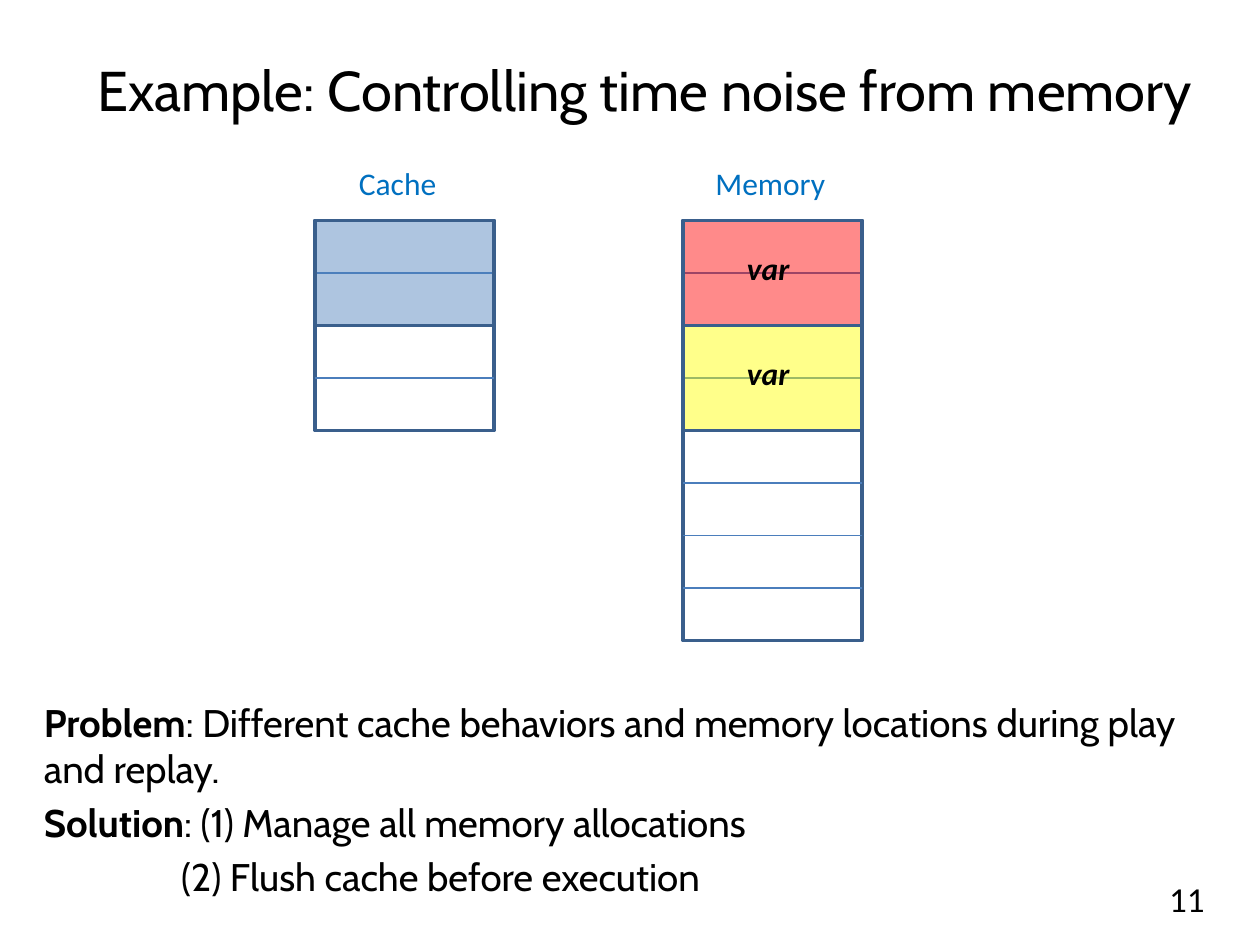
from lxml import etree
from pptx import Presentation
from pptx.dml.color import RGBColor
from pptx.enum import shapes, text
from pptx.oxml import ns
from pptx.util import Inches, Pt

BLACK = RGBColor(0x00, 0x00, 0x00)
LABEL = RGBColor(0x00, 0x70, 0xC0)
BORDER = RGBColor(0x3A, 0x5F, 0x8C)
RULE = RGBColor(0x4B, 0x7E, 0xBC)
RED = RGBColor(0xFF, 0x00, 0x00)
YELLOW = RGBColor(0xFF, 0xFF, 0x00)
BLUE = RGBColor(0x4F, 0x81, 0xBD)

TOP = 1.75
ROW = 5 / 12
WIDTH = 1.42

prs = Presentation()
prs.slide_width, prs.slide_height = Inches(10), Inches(7.5)
s = prs.slides.add_slide(prs.slide_layouts[6])


def add_text(x, y, w, h, paragraphs, size, font="Calibri", color=BLACK):
    """Add a text box; each paragraph is a list of (text, bold) runs."""
    tf = s.shapes.add_textbox(Inches(x), Inches(y), Inches(w), Inches(h)).text_frame
    tf.word_wrap = True
    for i, runs in enumerate(paragraphs):
        p = tf.add_paragraph() if i else tf.paragraphs[0]
        p.font.size, p.font.name, p.font.color.rgb = Pt(size), font, color
        for words, bold in runs:
            r = p.add_run()
            r.text, r.font.bold = words, bold
    return tf


def add_block(x, y, rows, fill=None):
    """Add an outlined block some rows high, with a see-through fill if given."""
    sp = s.shapes.add_shape(shapes.MSO_SHAPE.RECTANGLE, Inches(x), Inches(y),
                            Inches(WIDTH), Inches(rows * ROW))
    sp.shadow.inherit = False
    sp.line.color.rgb, sp.line.width = BORDER, Pt(2)
    if fill is None:
        sp.fill.background()
        return
    sp.fill.solid()
    sp.fill.fore_color.rgb = fill
    color = sp._element.spPr.find(ns.qn("a:solidFill"))[0]
    etree.SubElement(color, ns.qn("a:alpha"), val="46000")


tf = add_text(0.33, 0.17, 9.58, 1.08,
              [[("Example: Controlling time noise from memory", False)]], 32, "Cabin")
tf.vertical_anchor = text.MSO_ANCHOR.MIDDLE
tf.paragraphs[0].alignment = text.PP_ALIGN.CENTER

tf = add_text(0.25, 5.5, 9.67, 1.96, [
    [("Problem", True),
     (": Different cache behaviors and memory locations during play and replay.", False)],
    [("Solution", True), (": (1) Manage all memory allocations", False)],
    [("(2) Flush cache before execution", False)],
], 22, "Cabin")
for p in tf.paragraphs:
    p.space_before = Pt(4.4)
tf.paragraphs[-1]._p.get_or_add_pPr().set("marL", str(Inches(1.09)))

tf = add_text(7.33, 6.93, 2.33, 0.4, [[("11", False)]], 20)
tf.vertical_anchor = text.MSO_ANCHOR.MIDDLE
tf.paragraphs[0].alignment = text.PP_ALIGN.RIGHT

# Each stack: left edge, rows, colours of its two-row blocks from the top
for x, rows, fills in [(5.42, 8, [RED, YELLOW]), (2.5, 4, [BLUE])]:
    add_block(x, TOP, rows)
    for i in range(1, rows):
        y = Inches(TOP + i * ROW)
        line = s.shapes.add_connector(shapes.MSO_CONNECTOR.STRAIGHT,
                                      Inches(x), y, Inches(x + WIDTH), y)
        line.line.color.rgb, line.line.width = RULE, Pt(0.75)
        etree.SubElement(line._element.spPr, ns.qn("a:effectLst"))
    for i, fill in enumerate(fills):
        add_block(x, TOP + 2 * i * ROW, 2, fill)

for label, x, w in [("Cache", 2.75, 1), ("Memory", 5.58, 1.17)]:
    add_text(x, 1.25, w, 0.4, [[(label, False)]], 18, color=LABEL)

for i in range(2):
    tf = add_text(5.83, 1.93 + 2 * i * ROW, 0.67, 0.4, [[("var", True)]], 18)
    tf.paragraphs[0].font.italic = True

prs.save("out.pptx")
